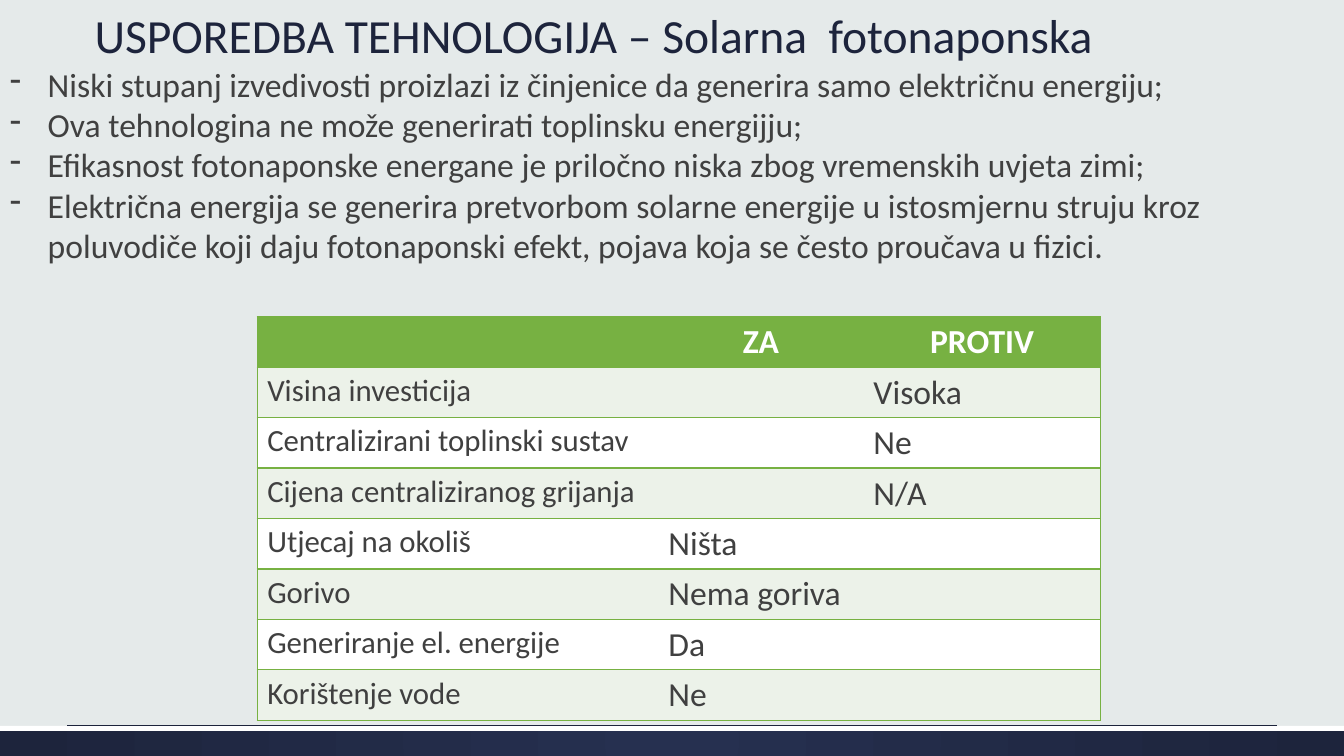
from dataclasses import dataclass
from lxml import etree
from pptx import Presentation
from pptx.dml.color import RGBColor
from pptx.enum import shapes, text
from pptx.oxml import ns, parse_xml
from pptx.util import Pt


@dataclass(frozen=True)
class Theme:
    face: str = "Calibri"
    back: str = "E5EAEA"
    navy: str = "1D243C"
    glow: str = "263050"
    ink: str = "404040"
    green: str = "77B142"
    pale: str = "ECF2E9"
    white: str = "FFFFFF"
    head: int = 34
    body: int = 24
    label: int = 22


THEME = Theme()
WIDE, HIGH = 960, 540
TITLE = "USPOREDBA TEHNOLOGIJA – Solarna  fotonaponska"
POINTS = [
    "Niski stupanj izvedivosti proizlazi iz činjenice da generira samo električnu energiju;",
    "Ova tehnologina ne može generirati toplinsku energijju;",
    "Efikasnost fotonaponske energane je priločno niska zbog vremenskih uvjeta zimi;",
    "Električna energija se generira pretvorbom solarne energije u istosmjernu struju kroz "
    "poluvodiče koji daju fotonaponski efekt, pojava koja se često proučava u fizici.",
]
ROWS = [
    ("", "ZA", "PROTIV"),
    ("Visina investicija", "", "Visoka"),
    ("Centralizirani toplinski sustav", "", "Ne"),
    ("Cijena centraliziranog grijanja", "", "N/A"),
    ("Utjecaj na okoliš", "Ništa", ""),
    ("Gorivo", "Nema goriva", ""),
    ("Generiranje el. energije", "Da", ""),
    ("Korištenje vode", "Ne", ""),
]
COLS = (286.5, 146.5, 169.5)


def tint(code):
    return RGBColor.from_string(code)


def style(para, size, color, bold=False):
    font = para.font
    font.name, font.size, font.bold = THEME.face, Pt(size), bold
    font.color.rgb = tint(color)


def add_bar(slide, x, y, w, h):
    shape = slide.shapes.add_shape(
        shapes.MSO_SHAPE.RECTANGLE, Pt(x), Pt(y), Pt(w), Pt(h))
    shape.shadow.inherit = False
    shape.line.fill.background()
    return shape


def add_foot(slide, x, y, w, h):
    band = add_bar(slide, x, y, w, h)
    band.fill.gradient()
    fill = band.fill
    for stop, color in zip(fill.gradient_stops, (THEME.glow, THEME.navy)):
        stop.color.rgb = tint(color)
    grad = band._element.spPr.find(ns.qn("a:gradFill"))
    grad.remove(grad.find(ns.qn("a:lin")))
    route = etree.SubElement(grad, ns.qn("a:path"), path="circle")
    etree.SubElement(route, ns.qn("a:fillToRect"),
                     l="50000", t="50000", r="50000", b="50000")
    strip = add_bar(slide, x, y, w, 3.6)
    strip.fill.solid()
    strip.fill.fore_color.rgb = tint(THEME.white)
    rule = slide.shapes.add_connector(
        shapes.MSO_CONNECTOR.STRAIGHT,
        Pt(x + 48), Pt(y - 0.5), Pt(x + w - 48), Pt(y - 0.5))
    rule.line.color.rgb = tint(THEME.navy)
    rule.line.width = Pt(0.75)
    etree.SubElement(rule._element.spPr, ns.qn("a:effectLst"))


def add_text(slide, x, y, w, h):
    frame = slide.shapes.add_textbox(Pt(x), Pt(y), Pt(w), Pt(h)).text_frame
    frame.word_wrap = True
    return frame


def add_title(slide, x, y, w, h):
    frame = add_text(slide, x, y, w, h)
    frame.vertical_anchor = text.MSO_ANCHOR.BOTTOM
    para = frame.paragraphs[0]
    para.text = TITLE
    para.line_spacing = 0.9
    style(para, THEME.head, THEME.navy)


def add_points(slide, x, y, w, h):
    frame = add_text(slide, x, y, w, h)
    frame.auto_size = text.MSO_AUTO_SIZE.SHAPE_TO_FIT_TEXT
    for i, line in enumerate(POINTS):
        para = frame.add_paragraph() if i else frame.paragraphs[0]
        para.text = line
        props = para._p.get_or_add_pPr()
        props.set("marL", str(Pt(27)))
        props.set("indent", str(Pt(-27)))
        etree.SubElement(props, ns.qn("a:buChar"), char="-")
        style(para, THEME.body, THEME.ink)


def edge(cell, sides):
    props = cell._tc.get_or_add_tcPr()
    for side in "LRTB":
        paint = (f'<a:solidFill><a:srgbClr val="{THEME.green}"/></a:solidFill>'
                 if side in sides else "<a:noFill/>")
        props.append(parse_xml(
            f'<a:ln{side} {ns.nsdecls("a")} w="{Pt(1)}">{paint}</a:ln{side}>'))


def add_grid(slide, x, y, w, h):
    table = slide.shapes.add_table(
        len(ROWS), len(COLS), Pt(x), Pt(y), Pt(w), Pt(h)).table
    for col, width in zip(table.columns, COLS):
        col.width = Pt(width)
    for r, row in enumerate(ROWS):
        table.rows[r].height = Pt(h / len(ROWS))
        shade = THEME.pale if r % 2 else THEME.white
        for c, words in enumerate(row):
            cell = table.cell(r, c)
            edge(cell, ("LTB", "TB", "RTB")[c])
            cell.fill.solid()
            cell.fill.fore_color.rgb = tint(shade if r else THEME.green)
            para = cell.text_frame.paragraphs[0]
            para.text = words
            if r:
                style(para, THEME.body if c else THEME.label, THEME.ink)
            else:
                para.alignment = text.PP_ALIGN.CENTER
                style(para, THEME.body, THEME.white, True)


def main():
    deck = Presentation()
    deck.slide_width, deck.slide_height = Pt(WIDE), Pt(HIGH)
    slide = deck.slides.add_slide(deck.slide_layouts[6])
    slide.background.fill.solid()
    slide.background.fill.fore_color.rgb = tint(THEME.back)
    add_foot(slide, 0, 518.4, WIDE, 21.6)
    add_title(slide, 60.5, -48.5, 796, 97.5)
    add_points(slide, 0, 42, WIDE, 152.5)
    add_grid(slide, 183.75, 226.25, sum(COLS), 288)
    deck.save("out.pptx")


if __name__ == "__main__":
    main()
